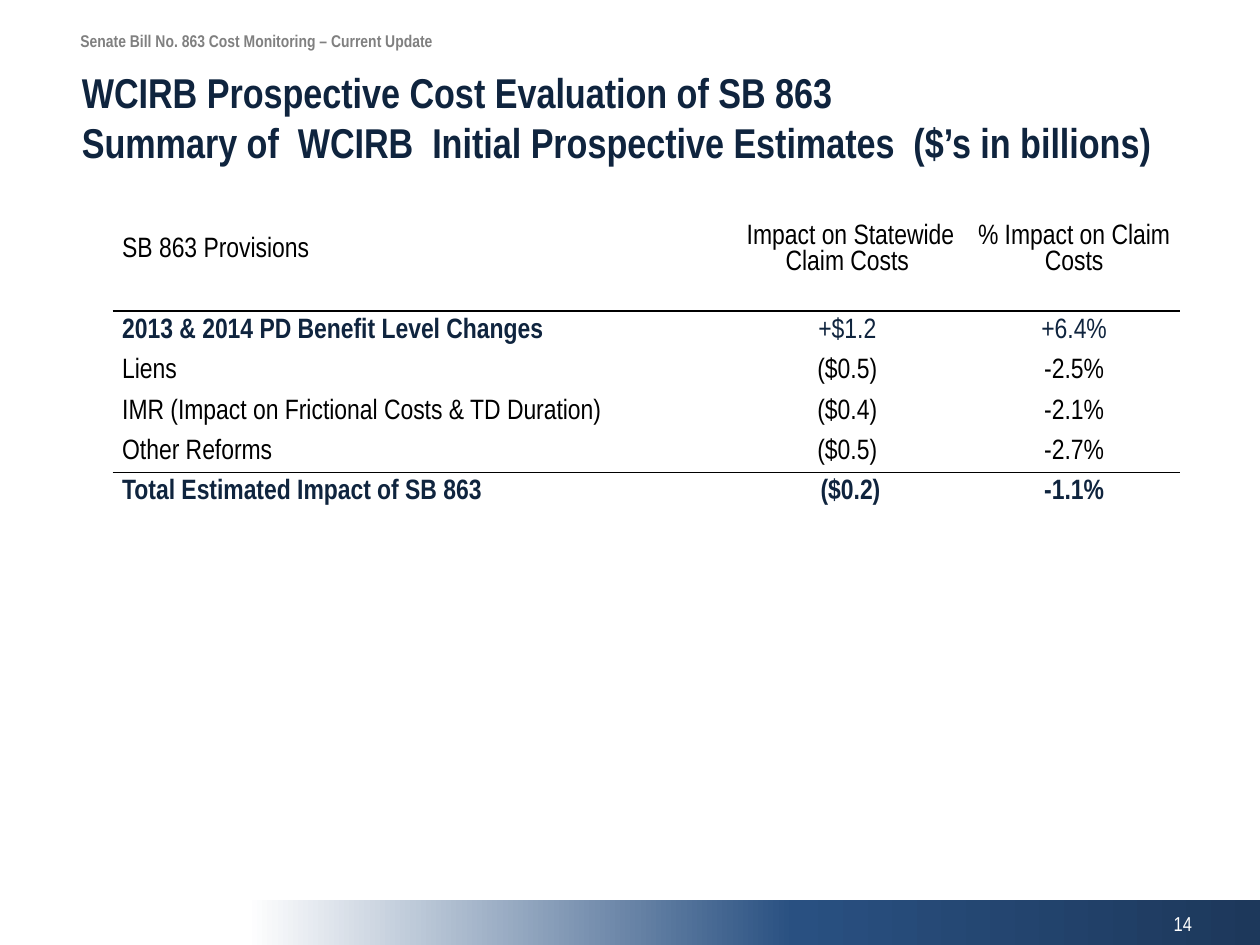
from copy import deepcopy

from lxml.etree import SubElement
from pptx import Presentation
from pptx.dml.color import RGBColor
from pptx.enum.shapes import MSO_SHAPE
from pptx.enum.text import MSO_ANCHOR, PP_ALIGN
from pptx.oxml.ns import qn
from pptx.util import Inches, Pt

FONT = "Arial Narrow"
NAVY, BLACK, WHITE, GRAY = "0F243E", "000000", "FFFFFF", "808080"

HEADINGS = ["SB 863 Provisions", " Impact on Statewide Claim Costs",
            "% Impact on Claim Costs"]
PROVISIONS = [
    ("2013 & 2014 PD Benefit Level Changes", "+$1.2", "+6.4%"),
    ("Liens", "($0.5)", "-2.5%"),
    ("IMR (Impact on Frictional Costs & TD Duration)", "($0.4)", "-2.1%"),
    ("Other Reforms", "($0.5)", "-2.7%"),
    ("Total Estimated Impact of SB 863", " ($0.2)", "-1.1%"),
]
COLUMN_WIDTHS = [4.86, 1.93, 1.67]
HEADING_HEIGHT, ROW_HEIGHT = 0.97, 0.32


def rgb(color):
    return RGBColor.from_string(color)


def add_run(paragraph, text, size, color, bold=False):
    run = paragraph.add_run()
    run.text = text
    run.font.name = FONT
    run.font.size = Pt(size)
    run.font.bold = bold
    run.font.color.rgb = rgb(color)


def add_text(slide, box, lines, size, color, bold=False,
             align=PP_ALIGN.LEFT, anchor=MSO_ANCHOR.TOP, margins=(0.11, 0.06)):
    frame = slide.shapes.add_textbox(*map(Inches, box)).text_frame
    frame.word_wrap = True
    frame.vertical_anchor = anchor
    frame.margin_left = frame.margin_right = Inches(margins[0])
    frame.margin_top = frame.margin_bottom = Inches(margins[1])
    paragraph = frame.paragraphs[0]
    paragraph.alignment = align
    for index, line in enumerate(lines):
        if index:
            paragraph.add_line_break()
        add_run(paragraph, line, size, color, bold)


def set_borders(cell, top, bottom):
    properties = cell._tc.get_or_add_tcPr()
    for side, color in (("L", WHITE), ("R", WHITE), ("T", top), ("B", bottom)):
        line = SubElement(properties, qn(f"a:ln{side}"), w=str(Pt(1)))
        fill = SubElement(line, qn("a:solidFill"))
        SubElement(fill, qn("a:srgbClr"), val=color)


def fill_cell(cell, text, color, bold, align):
    cell.fill.background()
    cell.vertical_anchor = MSO_ANCHOR.MIDDLE
    cell.margin_left = cell.margin_right = Inches(0.07)
    cell.margin_top = cell.margin_bottom = 0
    paragraph = cell.text_frame.paragraphs[0]
    paragraph.alignment = align
    add_run(paragraph, text, 16, color, bold)


def add_heading(slide, left, top, width):
    add_text(slide, (left, top, width, 0.26),
             ["Senate Bill No. 863 Cost Monitoring – Current Update"],
             9.7, GRAY, bold=True, margins=(0.1, 0.05))
    add_text(slide, (left, top + 0.28, width, 1.08),
             ["WCIRB Prospective Cost Evaluation of SB 863",
              "Summary of  WCIRB  Initial Prospective Estimates  ($’s in billions)"],
             23.8, NAVY, bold=True)


def add_estimates(slide, left, top):
    rows = [HEADINGS, *PROVISIONS]
    last = len(rows) - 1
    heights = [HEADING_HEIGHT] + [ROW_HEIGHT] * last
    table = slide.shapes.add_table(
        len(rows), len(HEADINGS), Inches(left), Inches(top),
        Inches(sum(COLUMN_WIDTHS)), Inches(sum(heights))).table
    table.first_row = table.horz_banding = False
    for column, width in zip(table.columns, COLUMN_WIDTHS):
        column.width = Inches(width)
    for row, height in zip(table.rows, heights):
        row.height = Inches(height)

    ruled_below = (0, last - 1)
    for r, values in enumerate(rows):
        for c, text in enumerate(values):
            cell = table.cell(r, c)
            set_borders(cell,
                        top=BLACK if r - 1 in ruled_below else WHITE,
                        bottom=BLACK if r in ruled_below else WHITE)
            fill_cell(cell, text,
                      color=NAVY if r in (1, last) else BLACK,
                      bold=r == last or (r == 1 and c == 0),
                      align=PP_ALIGN.CENTER if c else PP_ALIGN.LEFT)


def add_footer(slide, left, top, width, height):
    # Band fading from navy at the right to white at the left
    band = slide.shapes.add_shape(
        MSO_SHAPE.RECTANGLE, *map(Inches, (left, top, width, height)))
    band.shadow.inherit = False
    band.line.fill.background()
    band.fill.gradient()
    band.fill.gradient_angle = 180
    stop_list = band._element.spPr.find(qn("a:gradFill")).find(qn("a:gsLst"))
    stop_list.append(deepcopy(stop_list[-1]))
    colors = [(0, "1D385B"), (0.46, "295081"), (1, WHITE)]
    for stop, (position, color) in zip(band.fill.gradient_stops, colors):
        stop.position = position
        stop.color.rgb = rgb(color)
    # Page number
    add_text(slide, (left + width - 2.76, top - 0.01, 2.33, 0.4), ["14"],
             11.5, WHITE, align=PP_ALIGN.RIGHT, anchor=MSO_ANCHOR.MIDDLE)


def main():
    deck = Presentation()
    deck.slide_width, deck.slide_height = Inches(10), Inches(7.5)
    slide = deck.slides.add_slide(deck.slide_layouts[6])
    add_footer(slide, 1.96, 7.14, 8.04, 0.36)
    add_heading(slide, 0.54, 0.19, 9)
    add_estimates(slide, 0.9, 1.5)
    deck.save("out.pptx")


if __name__ == "__main__":
    main()
